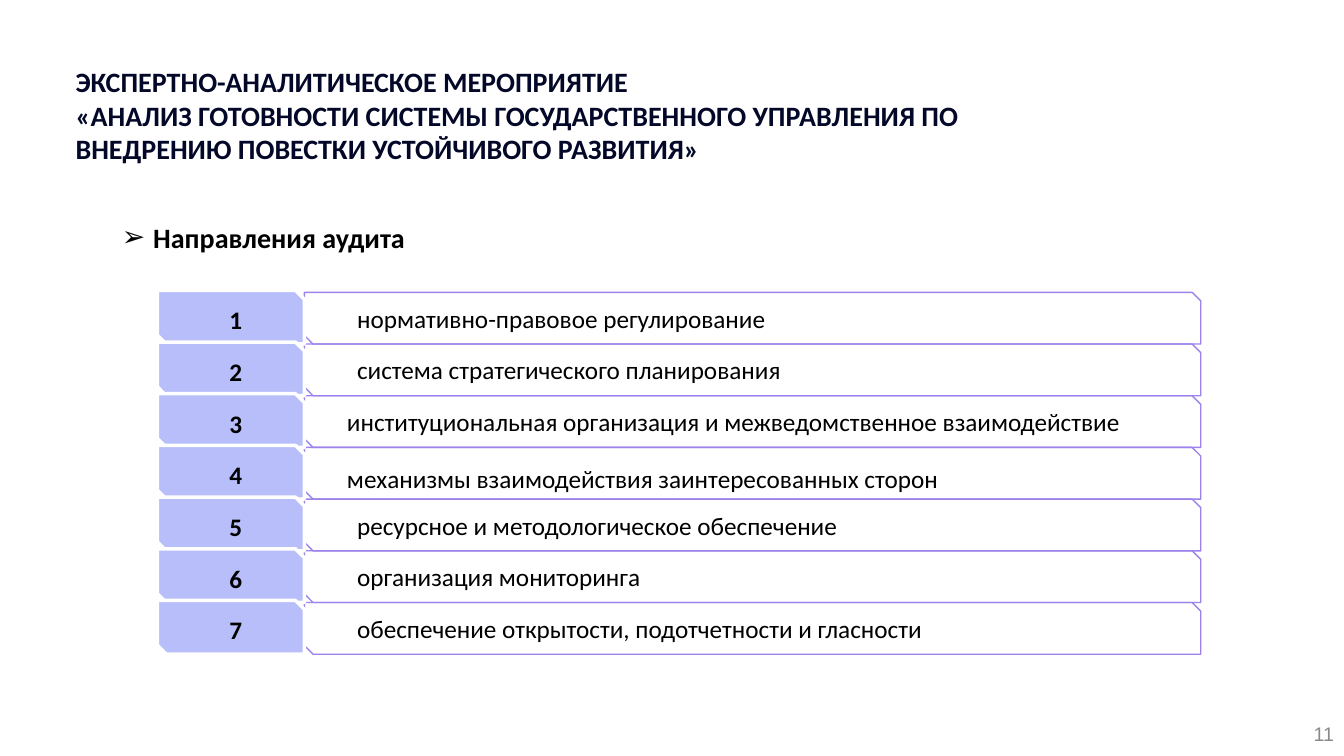
from lxml import etree
from pptx import Presentation, util as u
from pptx.dml.color import RGBColor
from pptx.enum import shapes, text
from pptx.oxml.ns import qn

W, H = 13.33, 7.5
ANCHOR, ALIGN = text.MSO_ANCHOR, text.PP_ALIGN
TITLE = ["ЭКСПЕРТНО-АНАЛИТИЧЕСКОЕ МЕРОПРИЯТИЕ",
         "«АНАЛИЗ ГОТОВНОСТИ СИСТЕМЫ ГОСУДАРСТВЕННОГО УПРАВЛЕНИЯ ПО "
         "ВНЕДРЕНИЮ ПОВЕСТКИ УСТОЙЧИВОГО РАЗВИТИЯ»"]
# Wording, left inset and top inset of each audit area
AREAS = [("нормативно-правовое регулирование", 0.48, 0),
         ("система стратегического планирования", 0.48, 0),
         ("институциональная организация и межведомственное взаимодействие", 0.38, 0),
         ("механизмы взаимодействия заинтересованных сторон", 0.38, 0.11),
         ("ресурсное и методологическое обеспечение", 0.48, 0),
         ("организация мониторинга", 0.48, 0),
         ("обеспечение открытости, подотчетности и гласности", 0.48, 0)]


def color(value):
    return RGBColor.from_string(value)


def place(sp, x, y, w, h):
    for name, value in dict(left=x, top=y, width=w, height=h).items():
        setattr(sp, name, u.Inches(value))


def write(sp, lines, size=18, ink="000000", bold=False, face="Calibri",
          align=ALIGN.LEFT, anchor=ANCHOR.MIDDLE, insets=(0.1, 0.05, 0.1, 0.05)):
    tf = sp.text_frame
    frame = dict(word_wrap=True, auto_size=text.MSO_AUTO_SIZE.NONE, vertical_anchor=anchor)
    sides = ("margin_left", "margin_top", "margin_right", "margin_bottom")
    frame.update(zip(sides, map(u.Inches, insets)))
    for name, value in frame.items():
        setattr(tf, name, value)
    for i, line in enumerate(lines):
        p = tf.add_paragraph() if i else tf.paragraphs[0]
        p.alignment = align
        r = p.add_run()
        r.text = line
        for name, value in dict(name=face, size=u.Pt(size), bold=bold).items():
            setattr(r.font, name, value)
        r.font.color.rgb = color(ink)


def snipped(s, x, y, w, h, line, weight, fill=None, alpha=100):
    sp = s.shapes.add_shape(shapes.MSO_SHAPE.SNIP_2_DIAG_RECTANGLE,
                            *map(u.Inches, (x, y, w, h)))
    sp.shadow.inherit = False
    sp.line.color.rgb = color(line)
    sp.line.width = u.Pt(weight)
    if fill:
        sp.fill.solid()
        sp.fill.fore_color.rgb = color(fill)
        clr = sp.fill._xPr.find(qn("a:solidFill"))[0]
        etree.SubElement(clr, qn("a:alpha")).set("val", str(alpha * 1000))
    else:
        sp.fill.background()
    return sp


def heading(s, x, y, w, h):
    place(s.shapes.title, x, y, w, h)
    write(s.shapes.title, TITLE, size=20, ink="030829", bold=True,
          anchor=ANCHOR.TOP, insets=(0, 0.05, 0.1, 0.05))


def subheading(s, x, y, w, h):
    sp = s.placeholders[1]
    place(sp, x, y, w, h)
    write(sp, ["Направления аудита"], size=20, bold=True)
    # Arrow bullet with a hanging indent
    pPr = sp.text_frame.paragraphs[0]._p.get_or_add_pPr()
    indent = u.Inches(0.31)
    pPr.set("marL", str(indent))
    pPr.set("indent", str(-indent))
    etree.SubElement(pPr, qn("a:buChar")).set("char", "➢")


def area_list(s, x, y, w, h):
    pitch = h / len(AREAS)
    tag_w, bar_x = 0.141 * w, 0.141 * w
    # Outlined bars
    for i, (label, left, top) in enumerate(AREAS):
        bar = snipped(s, x + bar_x, y + i * pitch, w - bar_x, pitch, "9D82EC", 1)
        write(bar, [label], insets=(left, top, 0, 0))
    # Numbered tags
    for i in range(len(AREAS)):
        tag = snipped(s, x, y - 0.02 + i * pitch, tag_w, pitch + 0.02,
                      "FFFFFF", 2.5, "3347F2", 35)
        write(tag, [str(i + 1)], bold=True, align=ALIGN.CENTER, insets=(0.1, 0.05, 0, 0))


def page_number(s, x, y, w, h):
    sp = s.shapes.add_textbox(*map(u.Inches, (x, y, w, h)))
    write(sp, ["11"], size=14, ink="898989", face="Arial", align=ALIGN.RIGHT)


def main():
    prs = Presentation()
    prs.slide_width, prs.slide_height = u.Inches(W), u.Inches(H)
    s = prs.slides.add_slide(prs.slide_layouts[1])
    heading(s, 0.75, 0.59, 10.36, 1.11)
    subheading(s, 1.11, 1.81, 11.76, 1.08)
    area_list(s, 1.56, 2.9, 10.35, 3.59)
    page_number(s, W - 3, 7.08, 3, 0.4)
    prs.save("out.pptx")


if __name__ == "__main__":
    main()
